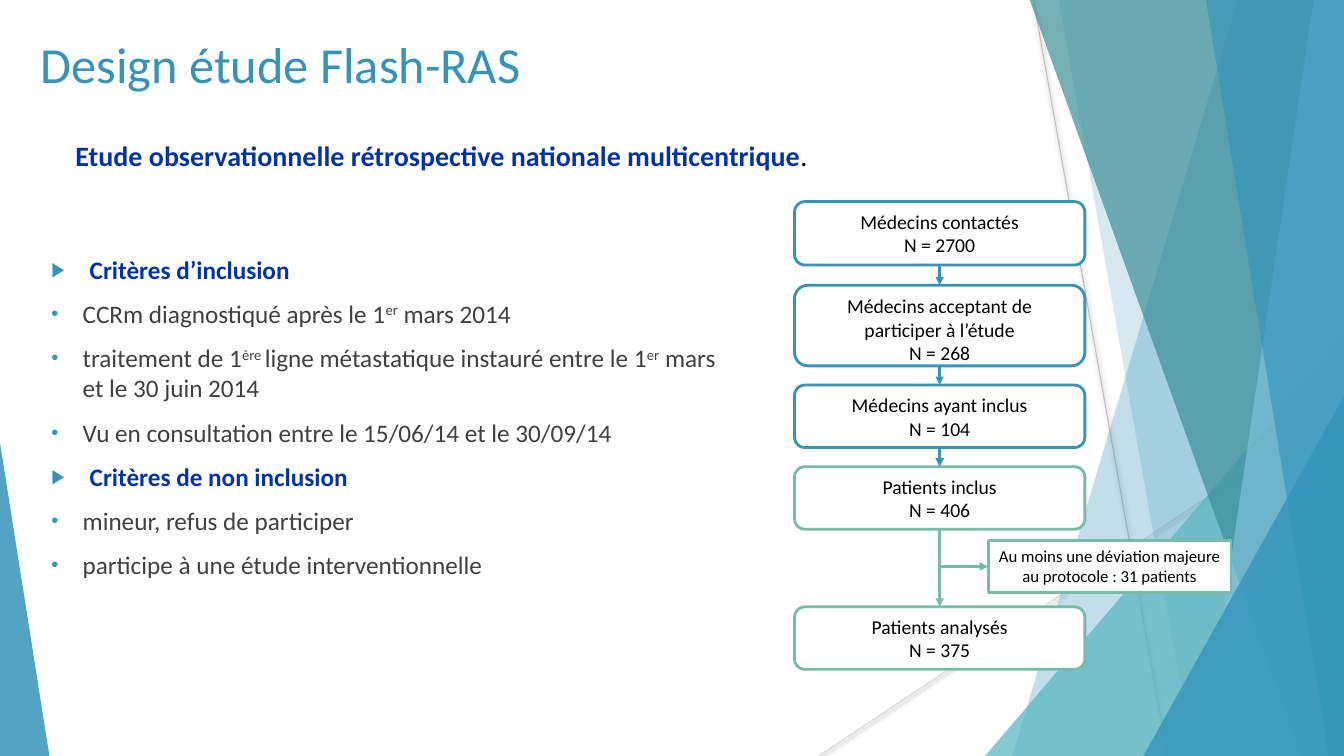
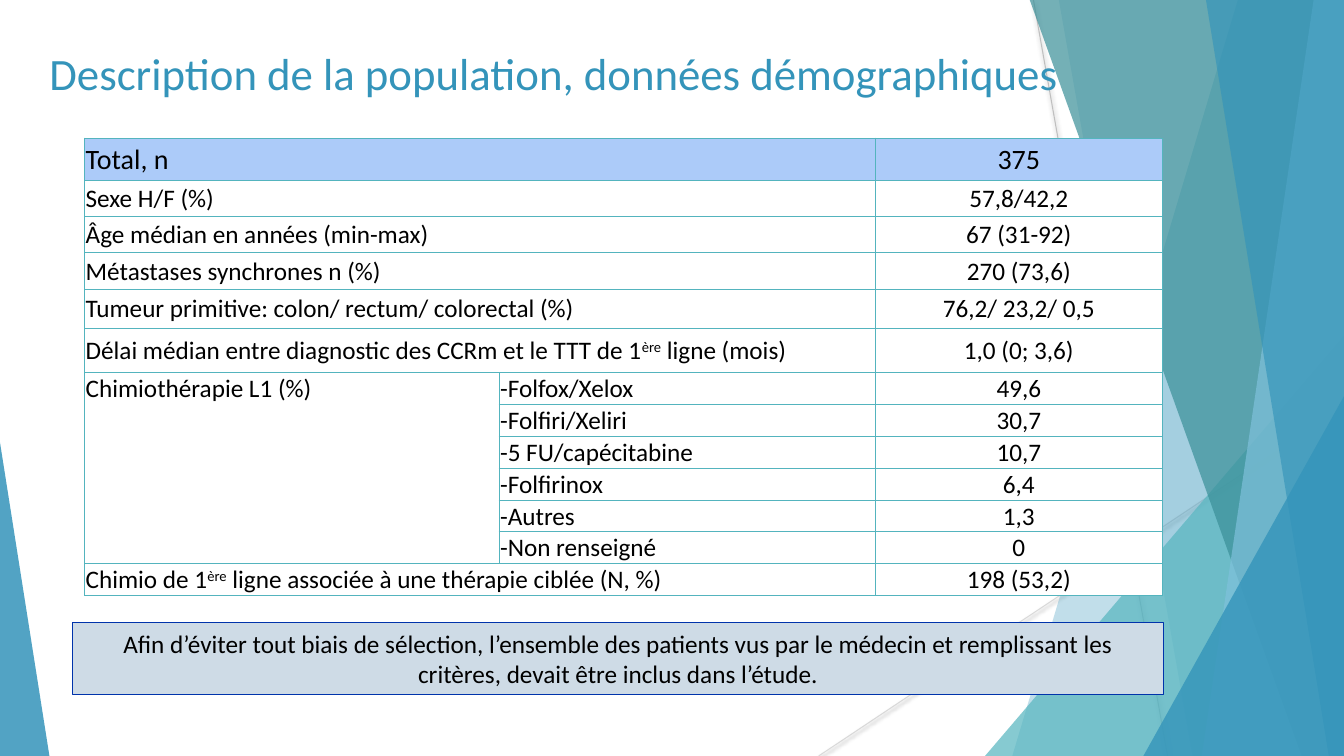
from lxml import etree
from pptx import Presentation
from pptx import util as u
from pptx.dml.color import RGBColor
from pptx.enum import shapes, text
from pptx.oxml import parse_xml
from pptx.oxml.ns import nsdecls, qn

EMU_PER_PX = 9144
WIDTH, HEIGHT = 1333, 750
FONT = "Calibri"
BLUE, TEAL, GREEN, NAVY = "3494BA", "58B6C0", "75BDA7", "0033AB"
BLACK, WHITE, GREY = "000000", "FFFFFF", "404040"
HEADER_FILL, NOTE_FILL, BORDER = "ACCBF9", "CEDBE6", "54B4BE"
LEFT, CENTER = text.PP_ALIGN.LEFT, text.PP_ALIGN.CENTER
TOP, MIDDLE, BOTTOM = (text.MSO_ANCHOR.TOP, text.MSO_ANCHOR.MIDDLE,
                       text.MSO_ANCHOR.BOTTOM)


def px(*lengths):
    return [u.Emu(length * EMU_PER_PX) for length in lengths]


def rgb(value):
    return RGBColor.from_string(value)


def add_runs(paragraph, content, size, color=BLACK, bold=False):
    """Add text run by run; parts between carets are superscript."""
    for index, part in enumerate(content.split("^")):
        if not part:
            continue
        run = paragraph.add_run()
        run.text = part
        run.font.name, run.font.size, run.font.bold = FONT, u.Pt(size), bold
        run.font.color.rgb = rgb(color)
        if index % 2:
            run._r.get_or_add_rPr().set("baseline", "30000")


def set_frame(frame):
    frame.word_wrap = True
    frame.auto_size = text.MSO_AUTO_SIZE.NONE
    frame.vertical_anchor = TOP


def style_shape(shape, fill, line=None, line_width=0.75, opacity=100):
    shape.shadow.inherit = False
    shape.fill.solid()
    shape.fill.fore_color.rgb = rgb(fill)
    if opacity < 100:
        color = shape.element.spPr.find(qn("a:solidFill"))[0]
        etree.SubElement(color, qn("a:alpha")).set("val", str(opacity * 1000))
    if line:
        shape.line.color.rgb = rgb(line)
        shape.line.width = u.Pt(line_width)
    else:
        shape.line.fill.background()


def add_line(parent, start, end, color, width, arrow=False, shadow=False):
    line = parent.add_connector(shapes.MSO_CONNECTOR.STRAIGHT, *px(*start, *end))
    line.line.color.rgb = rgb(color)
    line.line.width = u.Pt(width)
    properties = line.element.spPr
    if arrow:
        tail = etree.SubElement(properties.find(qn("a:ln")), qn("a:tailEnd"))
        tail.set("type", "triangle")
    effects = etree.SubElement(properties, qn("a:effectLst"))
    if shadow:
        effects.append(parse_xml(
            f'<a:outerShdw {nsdecls("a")} blurRad="39370" dist="20320" dir="5400000" '
            'rotWithShape="0"><a:srgbClr val="000000"><a:alpha val="38000"/>'
            '</a:srgbClr></a:outerShdw>'))
    return line


def add_text_shape(slide, kind, box, lines, size, fill, line, line_width):
    shape = slide.shapes.add_shape(kind, *px(*box))
    style_shape(shape, fill, line, line_width)
    set_frame(shape.text_frame)
    for index, content in enumerate(lines):
        paragraph = (shape.text_frame.add_paragraph() if index
                     else shape.text_frame.paragraphs[0])
        paragraph.alignment = CENTER
        add_runs(paragraph, content, size)
    return shape


def move_placeholder(placeholder, box):
    placeholder.left, placeholder.top, placeholder.width, placeholder.height = px(*box)
    set_frame(placeholder.text_frame)
    return placeholder.text_frame


def set_title(slide, box, content, size):
    paragraph = move_placeholder(slide.shapes.title, box).paragraphs[0]
    paragraph.alignment = LEFT
    add_runs(paragraph, content, size, BLUE)


def add_facets_to_master(presentation, slide):
    """Draw the facets in a group on the slide, then move it to the master."""
    group = slide.shapes.add_group_shape()
    parts = group.shapes
    add_line(parts, (1025, 0), (1158, HEIGHT), "BFBFBF", 0.75, shadow=True)
    add_line(parts, (WIDTH, 403), (812, HEIGHT), "D9D9D9", 0.75, shadow=True)

    def add_band(top_x, bottom_x, fill, opacity):
        builder = parts.build_freeform(*px(top_x, -1), scale=1.0)
        corners = [(WIDTH, -1), (WIDTH, HEIGHT), (bottom_x, HEIGHT)]
        builder.add_line_segments([px(*corner) for corner in corners], close=True)
        style_shape(builder.convert_to_shape(), fill, opacity=opacity)

    def add_triangle(left, top, width, apex, fill, opacity):
        triangle = parts.add_shape(shapes.MSO_SHAPE.ISOSCELES_TRIANGLE,
                                   *px(left, top, width, HEIGHT - top))
        triangle.adjustments[0] = apex
        style_shape(triangle, fill, opacity=opacity)

    add_band(1228, 1004, BLUE, 30)
    add_band(1050, 1183, BLUE, 20)
    add_triangle(977, 333, 356, 1, TEAL, 72)
    add_band(1021, 1291, "3A8F98", 70)
    add_band(1303, 1192, "7FC1DB", 70)
    add_band(1196, 1318, BLUE, 65)
    add_triangle(1134, 393, 199, 1, BLUE, 80)
    add_triangle(0, 439, 49, 0, BLUE, 85)

    for number, node in enumerate(group.element.xpath(".//p:cNvPr"), 100):
        node.set("id", str(number))
    presentation.slide_master.shapes.element.insert(2, group.element)


def add_criteria(placeholder, box, items):
    """Fill the list; items are (is heading, text)."""
    frame = move_placeholder(placeholder, box)
    for index, (heading, content) in enumerate(items):
        paragraph = frame.add_paragraph() if index else frame.paragraphs[0]
        indent = px(38 if heading else 31)[0]
        properties = paragraph._p.get_or_add_pPr()
        properties.set("marL", str(indent))
        properties.set("indent", str(-indent))
        color = etree.SubElement(properties, qn("a:buClr"))
        etree.SubElement(color, qn("a:srgbClr")).set("val", BLUE)
        etree.SubElement(properties, qn("a:buSzPct")).set("val", "80000")
        etree.SubElement(properties, qn("a:buChar")).set("char", "▶" if heading else "•")
        paragraph.alignment = LEFT
        paragraph.space_before = u.Pt(10 if index else 0)
        add_runs(paragraph, content, 18, NAVY if heading else GREY, heading)


def add_flowchart(slide, left, top):
    width = 288
    steps = [
        (0, 63, BLUE, ["Médecins contactés", "N = 2700"]),
        (83, 80, BLUE, ["Médecins acceptant de participer à l’étude", "N = 268"]),
        (182, 62, BLUE, ["Médecins ayant inclus", "N = 104"]),
        (263, 62, GREEN, ["Patients inclus", "N = 406"]),
        (402, 62, GREEN, ["Patients analysés", "N = 375"]),
    ]
    boxes = [add_text_shape(slide, shapes.MSO_SHAPE.FLOWCHART_ALTERNATE_PROCESS,
                            (left, top + offset, width, height), lines, 14,
                            WHITE, color, 2)
             for offset, height, color, lines in steps]
    deviation = add_text_shape(slide, shapes.MSO_SHAPE.RECTANGLE,
                               (left + 192, top + 336, 241, 52),
                               ["Au moins une déviation majeure au protocole\u00a0: 31 patients"],
                               12, WHITE, GREEN, 2)
    middle = left + width // 2
    for index, (upper, lower) in enumerate(zip(boxes, boxes[1:])):
        color = BLUE if index < 3 else GREEN
        arrow = add_line(slide.shapes, (middle, top), (middle, top), color, 2, arrow=True)
        arrow.begin_connect(upper, 2)
        arrow.end_connect(lower, 0)
    branch_y = top + 362
    branch = add_line(slide.shapes, (middle, branch_y), (left + 192, branch_y),
                      GREEN, 2, arrow=True)
    branch.end_connect(deviation, 1)


def style_cell(cell, fill, anchor):
    cell.margin_left, cell.margin_right, cell.margin_top, cell.margin_bottom = px(1, 1, 1, 0)
    cell.vertical_anchor = anchor
    properties = cell._tc.get_or_add_tcPr()
    for side in ("lnL", "lnR", "lnT", "lnB"):
        properties.append(parse_xml(
            f'<a:{side} {nsdecls("a")} w="9525"><a:solidFill>'
            f'<a:srgbClr val="{BORDER}"/></a:solidFill></a:{side}>'))
    cell.fill.solid()
    cell.fill.fore_color.rgb = rgb(fill)


def add_population_table(slide, left, top):
    widths = [411, 373, 285]
    heights = [42, 36, 36, 36, 39, 44] + [31] * 7
    rows = [
        ("Total, n", None, "375"),
        ("Sexe H/F (%)", None, "57,8/42,2"),
        ("Âge médian en années (min-max)", None, "67 (31-92)"),
        ("Métastases synchrones n (%)", None, "270 (73,6)"),
        ("Tumeur primitive: colon/ rectum/ colorectal (%)", None, "76,2/ 23,2/ 0,5"),
        ("Délai médian entre diagnostic des CCRm et le TTT de 1^ère^ ligne (mois)",
         None, "1,0 (0; 3,6)"),
        ("Chimiothérapie L1 (%)", "-Folfox/Xelox", "49,6"),
        (None, "-Folfiri/Xeliri", "30,7"),
        (None, "-5 FU/capécitabine", "10,7"),
        (None, "-Folfirinox", "6,4"),
        (None, "-Autres", "1,3"),
        (None, "-Non renseigné", "0"),
        ("Chimio de 1^ère^ ligne associée à une thérapie ciblée (N, %)", None, "198 (53,2)"),
    ]
    first_drug, last_drug = 6, 11
    table = slide.shapes.add_table(len(rows), len(widths),
                                   *px(left, top, sum(widths), sum(heights))).table
    table.first_row = table.horz_banding = False
    for column, width in zip(table.columns, px(*widths)):
        column.width = width
    for index, (row, height) in enumerate(zip(table.rows, px(*heights))):
        row.height = height
        for position, content in enumerate(rows[index]):
            cell = table.cell(index, position)
            anchor = MIDDLE if index < first_drug else BOTTOM
            if index == first_drug and position == 0:
                anchor = TOP
            style_cell(cell, WHITE if index else HEADER_FILL, anchor)
            paragraph = cell.text_frame.paragraphs[0]
            paragraph.alignment = CENTER if position == 2 else LEFT
            add_runs(paragraph, content or "", 18 if index else 20)
        if not first_drug <= index <= last_drug:
            table.cell(index, 0).merge(table.cell(index, 1))
    table.cell(first_drug, 0).merge(table.cell(last_drug, 0))


def build_design_slide(slide):
    set_title(slide, (30, 28, 1125, 85), "Design étude Flash-RAS", 36)
    add_criteria(slide.placeholders[1], (41, 247, 703, 400), [
        (True, "Critères d’inclusion"),
        (False, "CCRm diagnostiqué après le 1^er^ mars 2014"),
        (False, "traitement de 1^ère ^ligne métastatique instauré entre le "
                "1^er^ mars et le 30 juin 2014"),
        (False, "Vu en consultation entre le 15/06/14 et le 30/09/14"),
        (True, "Critères de non inclusion"),
        (False, "mineur, refus de participer"),
        (False, "participe à une étude interventionnelle"),
    ])
    subtitle = slide.shapes.add_textbox(*px(65, 132, 944, 44)).text_frame
    set_frame(subtitle)
    add_runs(subtitle.paragraphs[0],
             "Etude observationnelle rétrospective nationale multicentrique", 20, NAVY, True)
    add_runs(subtitle.paragraphs[0], ".", 20)
    add_flowchart(slide, 788, 200)


def build_population_slide(slide):
    set_title(slide, (39, 40, 1164, 99),
              "Description de la population, données démographiques", 32)
    add_population_table(slide, 84, 137)
    add_text_shape(slide, shapes.MSO_SHAPE.RECTANGLE, (72, 618, 1082, 71),
                   ["Afin d’éviter tout biais de sélection, l’ensemble des patients vus par "
                    "le médecin et remplissant les critères, devait être inclus dans l’étude."],
                   18, NOTE_FILL, NAVY, 0.75)


def main():
    presentation = Presentation()
    presentation.slide_width, presentation.slide_height = px(WIDTH, HEIGHT)
    title_and_content, title_only = (presentation.slide_layouts[index] for index in (1, 5))
    design_slide = presentation.slides.add_slide(title_and_content)
    add_facets_to_master(presentation, design_slide)
    build_design_slide(design_slide)
    build_population_slide(presentation.slides.add_slide(title_only))
    presentation.save("out.pptx")


if __name__ == "__main__":
    main()
